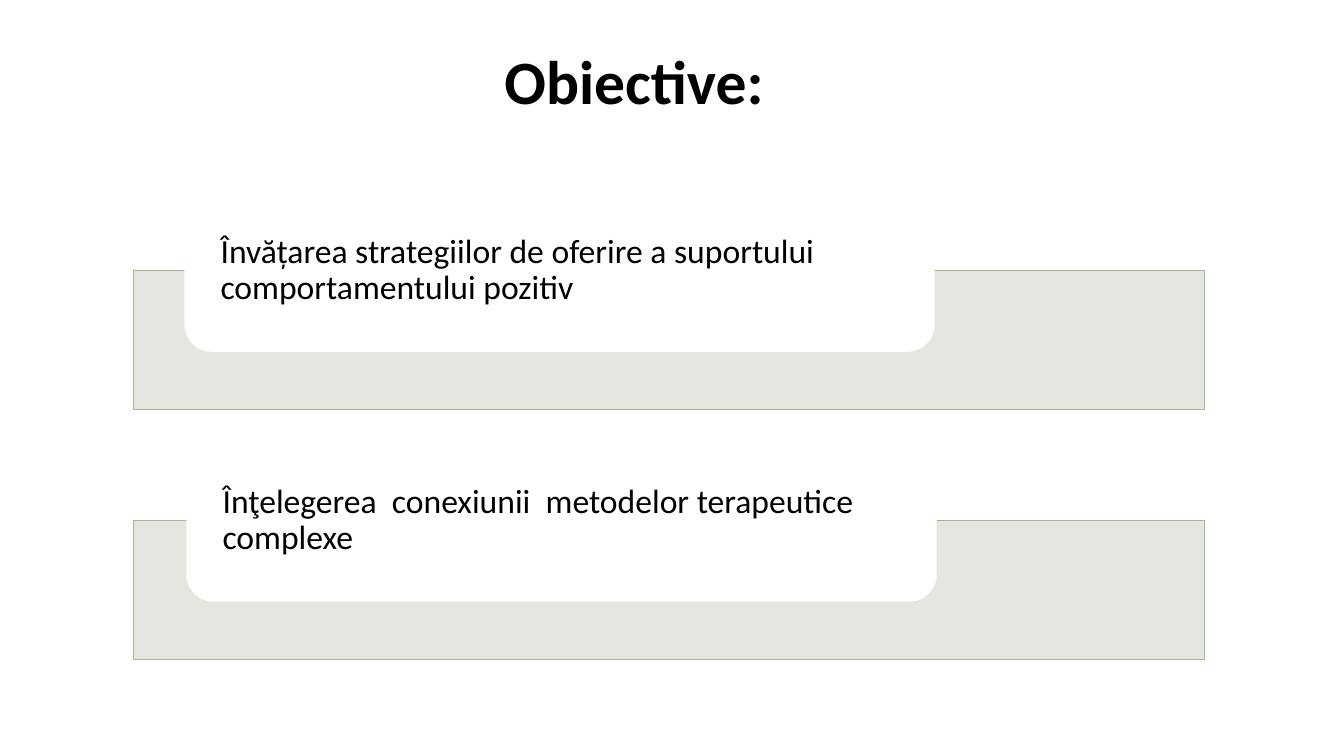
import pptx
import pptx.util
import pptx.dml.color
import pptx.enum.shapes
import pptx.enum.text
import pptx.oxml
import pptx.oxml.ns

Inches = pptx.util.Inches
Shape = pptx.enum.shapes.MSO_SHAPE
Align = pptx.enum.text.PP_ALIGN

COLORS = {"text": "000000", "band": "E1E5DC", "edge": "A5B592", "card": "FFFFFF"}
FONT = "Calibri"
TOP, STEP = 1.88, 2.48

# Card left edge and wording of each goal
GOALS = [
    (1.83, "Învățarea strategiilor de oferire a suportului comportamentului pozitiv"),
    (1.85, "Înţelegerea  conexiunii  metodelor terapeutice complexe"),
]


def color(name):
    return pptx.dml.color.RGBColor.from_string(COLORS[name])


def add_box(slide, kind, place, fill):
    box = slide.shapes.add_shape(kind, *map(Inches, place))
    box.shadow.inherit = False
    box.fill.solid()
    box.fill.fore_color.rgb = color(fill)
    box.line.fill.background()
    return box


def write(frame, text, size, align, bold=False):
    frame.word_wrap = True
    frame.auto_size = pptx.enum.text.MSO_AUTO_SIZE.NONE
    frame.vertical_anchor = pptx.enum.text.MSO_ANCHOR.MIDDLE
    para = frame.paragraphs[0]
    para.alignment = align
    para.line_spacing = 0.9
    run = para.add_run()
    run.text = text
    run.font.name = FONT
    run.font.size = pptx.util.Pt(size)
    run.font.bold = bold
    run.font.color.rgb = color("text")


def add_title(slide, text):
    title = slide.shapes.title
    title.left, title.top = Inches(-0.12), Inches(0.4)
    title.width, title.height = Inches(12.54), Inches(0.87)
    title.text_frame.margin_left = Inches(0.38)
    write(title.text_frame, text, 44, Align.CENTER, True)


def add_band(slide, top):
    band = add_box(slide, Shape.RECTANGLE, (1.32, top, 10.63, 1.38), "band")
    band.line.color.rgb = color("edge")
    band.line.width = pptx.util.Pt(0.5)
    # Fill at 90 % opacity
    tint = band.fill._xPr.find(".//" + pptx.oxml.ns.qn("a:srgbClr"))
    space = pptx.oxml.ns.nsdecls("a")
    tint.append(pptx.oxml.parse_xml(f'<a:alpha {space} val="90000"/>'))


def add_card(slide, left, top, text):
    card = add_box(slide, Shape.ROUNDED_RECTANGLE, (left, top, 7.44, 1.61), "card")
    frame = card.text_frame
    frame.margin_left = frame.margin_right = Inches(0.28)
    frame.margin_top = frame.margin_bottom = 0
    write(frame, text, 24, Align.LEFT)


def main():
    deck = pptx.Presentation()
    deck.slide_width, deck.slide_height = Inches(13.33), Inches(7.5)
    slide = deck.slides.add_slide(deck.slide_layouts[5])

    add_title(slide, "Obiective:")

    # Each card overlaps the band below it
    for row, (left, text) in enumerate(GOALS):
        top = TOP + row * STEP
        add_band(slide, top + 0.8)
        add_card(slide, left, top, text)

    deck.save("out.pptx")


if __name__ == "__main__":
    main()
